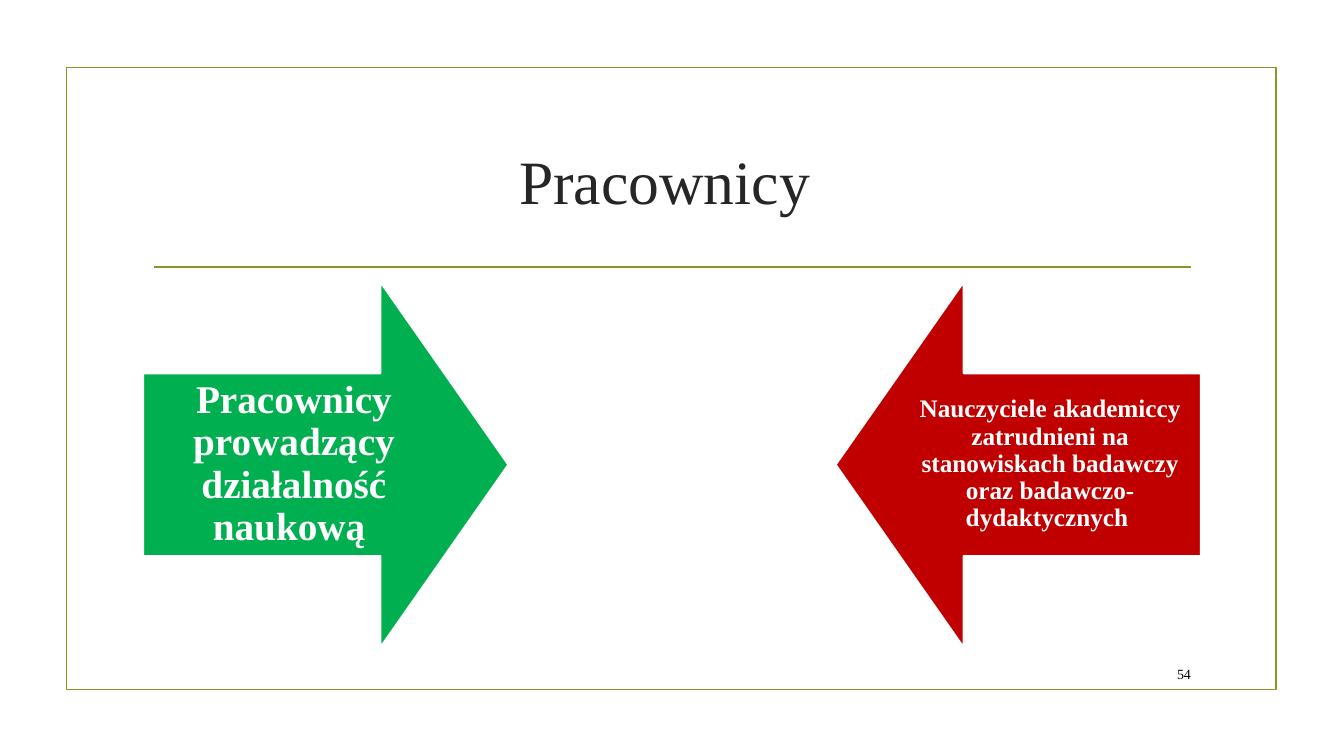
from lxml.etree import SubElement
from pptx import Presentation
from pptx.dml.color import RGBColor
from pptx.enum.shapes import MSO_CONNECTOR, MSO_SHAPE
from pptx.enum.text import MSO_ANCHOR, PP_ALIGN
from pptx.oxml.ns import qn
from pptx.util import Inches, Pt

COLORS = {
    "olive": "83992A",
    "title": "262626",
    "green": "00B050",
    "red": "C00000",
    "white": "FFFFFF",
    "black": "000000",
}


class SlideBuilder:
    font_name = "Times New Roman"
    line_width = Pt(1.25)

    def __init__(self, slide):
        self.shapes = slide.shapes

    def color(self, name):
        return RGBColor.from_string(COLORS[name])

    def outline(self, line, color):
        line.color.rgb = self.color(color)
        line.width = self.line_width

    def shape(self, kind, left, top, width, height, line, fill=None):
        shape = self.shapes.add_shape(
            kind, Inches(left), Inches(top), Inches(width), Inches(height))
        shape.shadow.inherit = False
        if fill:
            shape.fill.solid()
            shape.fill.fore_color.rgb = self.color(fill)
        else:
            shape.fill.background()
        self.outline(shape.line, line)
        return shape

    def rule(self, left, right, y):
        rule = self.shapes.add_connector(
            MSO_CONNECTOR.STRAIGHT, Inches(left), Inches(y), Inches(right), Inches(y))
        self.outline(rule.line, "olive")
        SubElement(rule._element.spPr, qn("a:effectLst"))

    def text(self, words, left, top, width, height, size, color,
             align=PP_ALIGN.CENTER, bold=False, inset=None, spacing=None):
        box = self.shapes.add_textbox(
            Inches(left), Inches(top), Inches(width), Inches(height))
        frame = box.text_frame
        frame.word_wrap = True
        frame.vertical_anchor = MSO_ANCHOR.MIDDLE
        if inset is not None:
            frame.margin_left = frame.margin_right = Inches(inset)
            frame.margin_top = frame.margin_bottom = Inches(inset)
        paragraph = frame.paragraphs[0]
        paragraph.alignment = align
        if spacing:
            paragraph.line_spacing = spacing
        run = paragraph.add_run()
        run.text = words
        run.font.name = self.font_name
        run.font.size = Pt(size)
        run.font.bold = bold
        run.font.color.rgb = self.color(color)

    def arrow(self, left, rotation, fill, words, text_left, size, inset):
        """Draw a sideways block arrow with its label on the shaft."""
        arrow = self.shape(MSO_SHAPE.DOWN_ARROW, left, 2.8, 3.62, 3.62, "white", fill)
        arrow.adjustments[0] = 0.5
        arrow.adjustments[1] = 0.35
        arrow.rotation = rotation
        self.text(words, text_left, 3.7, 2.99, 1.81, size, "white",
                  bold=True, inset=inset, spacing=0.9)


def main():
    presentation = Presentation()
    presentation.slide_width = Inches(13.33)
    presentation.slide_height = Inches(7.5)
    builder = SlideBuilder(
        presentation.slides.add_slide(presentation.slide_layouts[6]))

    builder.shape(MSO_SHAPE.RECTANGLE, 0.66, 0.67, 12, 6.17, "olive")
    builder.rule(1.53, 11.81, 2.65)
    builder.text("Pracownicy ", 1.42, 1.07, 10.5, 1.43, 44, "title")
    builder.arrow(1.42, 270, "green", "Pracownicy prowadzący działalność naukową ",
                  text_left=1.42, size=28, inset=0.22)
    builder.arrow(8.29, 90, "red",
                  "Nauczyciele akademiccy zatrudnieni na stanowiskach badawczy "
                  "oraz badawczo-dydaktycznych ",
                  text_left=8.92, size=18, inset=0.14)
    builder.text("54", 11.32, 6.53, 0.59, 0.31, 10, "black", align=PP_ALIGN.RIGHT)

    presentation.save("out.pptx")


if __name__ == "__main__":
    main()
